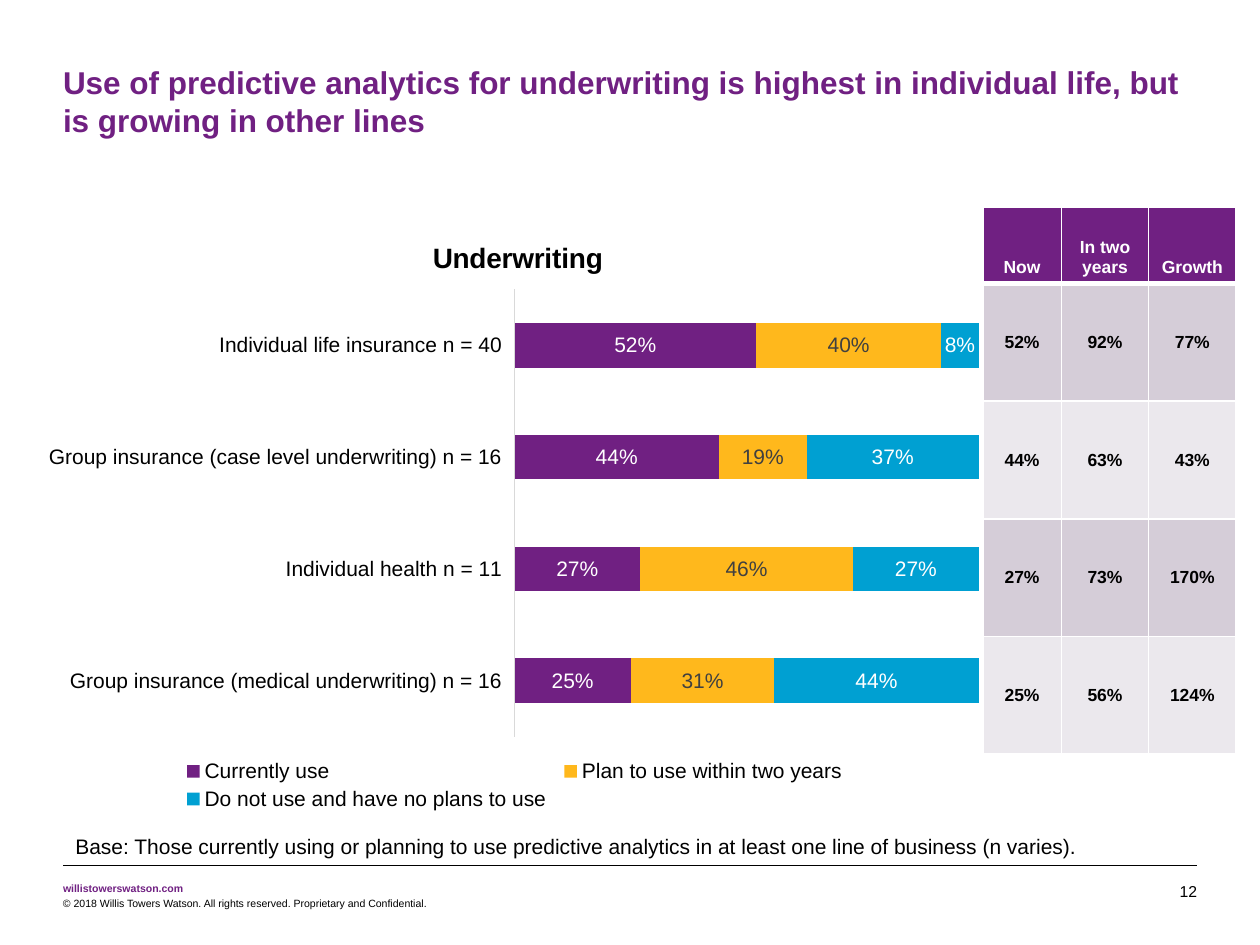
from dataclasses import dataclass

from lxml.etree import SubElement
from pptx import Presentation
from pptx.chart.data import CategoryChartData
from pptx.dml.color import RGBColor
from pptx.enum.chart import (XL_CHART_TYPE, XL_LABEL_POSITION, XL_LEGEND_POSITION,
                             XL_TICK_LABEL_POSITION, XL_TICK_MARK)
from pptx.enum.shapes import MSO_CONNECTOR
from pptx.enum.text import MSO_ANCHOR, PP_ALIGN
from pptx.oxml import parse_xml
from pptx.oxml.ns import nsdecls, qn
from pptx.util import Inches, Pt

SLIDE_WIDTH, SLIDE_HEIGHT = Inches(10), Inches(7.5)


@dataclass(frozen=True)
class Theme:
    font: str = "Arial"
    purple: str = "702082"
    amber: str = "FFB81C"
    blue: str = "00A0D2"
    white: str = "FFFFFF"
    black: str = "000000"
    dark_grey: str = "404040"
    axis_grey: str = "D9D9D9"
    bands: tuple = ("D5CDD8", "EBE8ED")
    title_size: float = 18
    chart_title_size: float = 16
    body_size: float = 12
    table_size: float = 10
    number_size: float = 9
    footer_size: float = 6


THEME = Theme()


@dataclass(frozen=True)
class Box:
    left: int
    top: int
    width: int
    height: int

    def region(self, left, top, width, height):
        """Box given as shares of this one."""
        return Box(int(self.left + left * self.width), int(self.top + top * self.height),
                   int(width * self.width), int(height * self.height))

    def place(self):
        return self.left, self.top, self.width, self.height


LINES_OF_BUSINESS = ["Individual life insurance n = 40",
                     "Group insurance (case level underwriting) n = 16",
                     "Individual health n = 11",
                     "Group insurance (medical underwriting) n = 16"]
CURRENT_USE = [52, 44, 27, 25]
PLANNED_USE = [40, 19, 46, 31]
NO_USE = [8, 37, 27, 44]
ANSWERS = [("Currently use", CURRENT_USE, THEME.purple, THEME.white),
           ("Plan to use within two years", PLANNED_USE, THEME.amber, THEME.dark_grey),
           ("Do not use and have no plans to use", NO_USE, THEME.blue, THEME.white)]


def style_font(font, size, color=THEME.black, bold=False):
    font.name, font.size, font.bold = THEME.font, Pt(size), bold
    font.color.rgb = RGBColor.from_string(color)


def fill_solid(fill, color):
    fill.solid()
    fill.fore_color.rgb = RGBColor.from_string(color)


def write(frame, text, size, color=THEME.black, bold=False, align=PP_ALIGN.LEFT):
    paragraph = frame.paragraphs[0]
    paragraph.text = text
    paragraph.alignment = align
    style_font(paragraph.font, size, color, bold)


def clear_margins(frame):
    frame.margin_left = frame.margin_top = frame.margin_right = frame.margin_bottom = 0


def add_text(slide, box, text, size, margins=False, wrap=True,
             anchor=MSO_ANCHOR.TOP, **style):
    frame = slide.shapes.add_textbox(*box.place()).text_frame
    frame.word_wrap = wrap
    frame.vertical_anchor = anchor
    if not margins:
        clear_margins(frame)
    write(frame, text, size, **style)


def add_title(slide, box, text):
    title = slide.shapes.title
    title.left, title.top, title.width, title.height = box.place()
    frame = title.text_frame
    frame.word_wrap = True
    frame.vertical_anchor = MSO_ANCHOR.TOP
    clear_margins(frame)
    write(frame, text, THEME.title_size, THEME.purple, bold=True)


def set_layout(element, before, **shares):
    """Place a chart element by shares of the chart, ahead of the named sibling."""
    for old in element.findall(qn("c:layout")):
        element.remove(old)
    layout = parse_xml(f"<c:layout {nsdecls('c')}><c:manualLayout/></c:layout>")
    manual = layout[0]
    if before == "c:barChart":
        SubElement(manual, qn("c:layoutTarget")).set("val", "inner")
    for axis in "xy":
        SubElement(manual, qn(f"c:{axis}Mode")).set("val", "edge")
    for name, share in shares.items():
        SubElement(manual, qn(f"c:{name}")).set("val", str(share))
    element.find(qn(before)).addprevious(layout)


def add_usage_chart(slide, box):
    usage = CategoryChartData(number_format="0%")
    usage.categories = LINES_OF_BUSINESS
    for name, percents, _, _ in ANSWERS:
        usage.add_series(name, [percent / 100 for percent in percents])
    chart = slide.shapes.add_chart(XL_CHART_TYPE.BAR_STACKED_100, *box.place(), usage).chart
    style_font(chart.font, THEME.table_size)

    chart.has_title = True
    write(chart.chart_title.text_frame, "Underwriting", THEME.chart_title_size,
          bold=True, align=PP_ALIGN.CENTER)
    chart.chart_title.include_in_layout = False
    chart.has_legend = True
    chart.legend.position = XL_LEGEND_POSITION.BOTTOM
    chart.legend.include_in_layout = False
    style_font(chart.legend.font, THEME.body_size)

    categories, values = chart.category_axis, chart.value_axis
    categories.reverse_order = True
    categories.major_tick_mark = categories.minor_tick_mark = XL_TICK_MARK.NONE
    categories.tick_label_position = XL_TICK_LABEL_POSITION.LOW
    style_font(categories.tick_labels.font, THEME.body_size)
    categories.format.line.color.rgb = RGBColor.from_string(THEME.axis_grey)
    categories.format.line.width = Pt(0.75)
    values.has_major_gridlines = False
    values.visible = False

    plot = chart.plots[0]
    plot.gap_width, plot.overlap = 150, 100
    plot.vary_by_categories = False
    for series, (_, _, color, label_color) in zip(plot.series, ANSWERS):
        fill_solid(series.format.fill, color)
        labels = series.data_labels
        labels.show_value = True
        labels.position = XL_LABEL_POSITION.CENTER
        labels.number_format, labels.number_format_is_linked = "0%", False
        style_font(labels.font, THEME.body_size, label_color)

    chart_body = chart.element.find(qn("c:chart"))
    set_layout(chart_body.find(qn("c:title")), "c:overlay", x=0.41, y=0.04)
    set_layout(chart_body.find(qn("c:plotArea")), "c:barChart", x=0.5, y=0.13, w=0.48, h=0.74)
    set_layout(chart_body.find(qn("c:legend")), "c:overlay", x=0.15, y=0.9, w=0.7, h=0.11)


def border_cell(cell, bottom_width):
    properties = cell._tc.get_or_add_tcPr()
    for index, (side, width) in enumerate([("L", 1), ("R", 1), ("T", 1), ("B", bottom_width)]):
        properties.insert(index, parse_xml(
            f'<a:ln{side} {nsdecls("a")} w="{Pt(width)}"><a:solidFill>'
            f'<a:srgbClr val="{THEME.white}"/></a:solidFill></a:ln{side}>'))


def add_growth_table(slide, box):
    rows = [("Now", "In two years", "Growth")]
    for now, planned in zip(CURRENT_USE, PLANNED_USE):
        rows.append([f"{percent}%" for percent in
                     (now, now + planned, round(100 * planned / now))])
    table = slide.shapes.add_table(len(rows), len(rows[0]), *box.place()).table
    for column, share in zip(table.columns, (0.31, 0.345, 0.345)):
        column.width = int(share * box.width)
    header_share = 0.14
    for index, row in enumerate(table.rows):
        share = (1 - header_share) / (len(rows) - 1) if index else header_share
        row.height = int(share * box.height)
        for cell, text in zip(row.cells, rows[index]):
            header = index == 0
            fill_solid(cell.fill, THEME.purple if header else THEME.bands[(index - 1) % 2])
            cell.vertical_anchor = MSO_ANCHOR.BOTTOM if header else MSO_ANCHOR.MIDDLE
            write(cell.text_frame, text, THEME.table_size,
                  THEME.white if header else THEME.black, bold=True, align=PP_ALIGN.CENTER)
            border_cell(cell, bottom_width=3 if header else 1)


def add_footer(slide, box):
    rule = slide.shapes.add_connector(MSO_CONNECTOR.STRAIGHT, box.left, box.top,
                                      box.left + box.width, box.top)
    rule.line.color.rgb = RGBColor.from_string(THEME.black)
    rule.line.width = Pt(0.25)
    SubElement(rule._element.spPr, qn("a:effectLst"))
    add_text(slide, box.region(0, 0.37, 0.11, 0.29), "willistowerswatson.com",
             THEME.footer_size, wrap=False, color=THEME.purple, bold=True)
    add_text(slide, box.region(0, 0.71, 0.64, 0.29),
             "© 2018 Willis Towers Watson. All rights reserved. Proprietary and Confidential.",
             THEME.footer_size)
    add_text(slide, box.region(0.95, 0.37, 0.05, 0.43), "12", THEME.number_size,
             anchor=MSO_ANCHOR.BOTTOM, align=PP_ALIGN.RIGHT)


def main():
    deck = Presentation()
    deck.slide_width, deck.slide_height = SLIDE_WIDTH, SLIDE_HEIGHT
    slide = deck.slides.add_slide(deck.slide_layouts[5])
    page = Box(0, 0, SLIDE_WIDTH, SLIDE_HEIGHT)
    add_title(slide, page.region(0.05, 0.067, 0.9, 0.045),
              "Use of predictive analytics for underwriting is highest in individual life, "
              "but is growing in other lines")
    add_usage_chart(slide, page.region(0.025, 0.223, 0.767, 0.64))
    add_growth_table(slide, page.region(0.78, 0.219, 0.201, 0.579))
    add_text(slide, page.region(0.05, 0.875, 0.816, 0.04),
             "Base: Those currently using or planning to use predictive analytics "
             "in at least one line of business (n varies).",
             THEME.body_size, margins=True, wrap=False)
    add_footer(slide, page.region(0.05, 0.916, 0.9, 0.047))
    deck.save("out.pptx")


if __name__ == "__main__":
    main()
